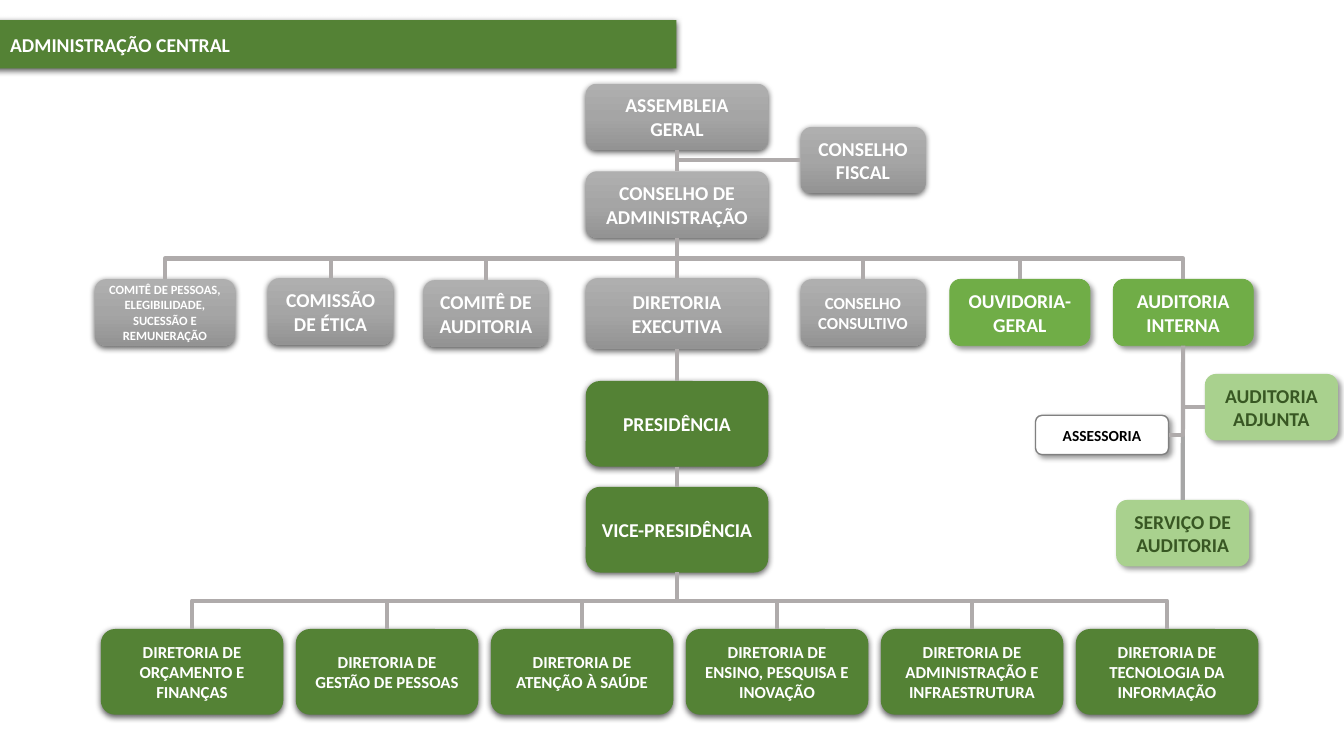
from dataclasses import dataclass
from copy import deepcopy

from lxml import etree
from pptx import Presentation
from pptx.dml.color import RGBColor
from pptx.enum.shapes import MSO_CONNECTOR, MSO_SHAPE
from pptx.enum.text import MSO_ANCHOR, MSO_AUTO_SIZE, PP_ALIGN
from pptx.oxml.ns import qn
from pptx.util import Inches, Pt

ROUNDED = MSO_SHAPE.ROUNDED_RECTANGLE
STRAIGHT, ELBOW = MSO_CONNECTOR.STRAIGHT, MSO_CONNECTOR.ELBOW
CENTER, LEFT_ALIGN = PP_ALIGN.CENTER, PP_ALIGN.LEFT
MIDDLE, NO_AUTOFIT = MSO_ANCHOR.MIDDLE, MSO_AUTO_SIZE.NONE
TOP, LEFT, BOTTOM, RIGHT = range(4)


@dataclass(frozen=True)
class Shadow:
    opacity: int
    blur: float
    distance: float
    angle: int


@dataclass(frozen=True)
class Style:
    fill: tuple[str, ...]
    text: str
    shadow: Shadow
    line: str = ""
    line_width: float = 0
    inset: float = 0


@dataclass(frozen=True)
class Theme:
    font: str = "Calibri"
    large: int = 14
    medium: int = 12
    small: int = 11
    tiny: int = 9
    connector: str = "AFABAB"
    audit_connector: str = "A6A6A6"
    connector_width: float = 3
    below: Shadow = Shadow(63, 4.5, 1.5, 90)
    diagonal: Shadow = Shadow(40, 4, 3, 45)
    council: Style = Style(("AFAFAF", "A5A5A5", "939393"), "FFFFFF", below)
    directorate: Style = Style(("548235",), "FFFFFF", below)
    control: Style = Style(("70AD47",), "FFFFFF", diagonal, "70AD47", 0.5)
    service: Style = Style(("A9D18E",), "385723", diagonal, inset=0.04)
    advisory: Style = Style(("FFFFFF",), "000000", diagonal, "808080", 1)


THEME = Theme()


@dataclass(frozen=True)
class Unit:
    text: str
    left: float
    top: float
    width: float
    height: float
    style: Style
    size: int = THEME.large


@dataclass(frozen=True)
class Link:
    parent: str
    child: str
    side: int = TOP
    color: str = THEME.connector


MAIN_LEFT, MAIN_WIDTH, LOW, HIGH = 5.81, 1.81, 0.66, 0.85
DIRECTORATE_PITCH = 9.67 / 5
UNITS = {
    "assembly": Unit("ASSEMBLEIA GERAL", MAIN_LEFT, 0.83, MAIN_WIDTH, LOW, THEME.council),
    "fiscal": Unit("CONSELHO\nFISCAL", 7.94, 1.26, 1.24, LOW, THEME.council),
    "board": Unit("CONSELHO DE ADMINISTRAÇÃO", MAIN_LEFT, 1.7, MAIN_WIDTH, LOW, THEME.council),
    "people": Unit("COMITÊ DE PESSOAS, ELEGIBILIDADE, SUCESSÃO E REMUNERAÇÃO",
                   0.94, 2.77, 1.39, LOW, THEME.council, THEME.tiny),
    "ethics": Unit("COMISSÃO DE ÉTICA", 2.66, 2.76, 1.24, LOW, THEME.council),
    "audit committee": Unit("COMITÊ DE AUDITORIA", 4.2, 2.78, 1.24, LOW, THEME.council),
    "executive": Unit("DIRETORIA EXECUTIVA", MAIN_LEFT, 2.76, MAIN_WIDTH, 0.7, THEME.council),
    "consultative": Unit("CONSELHO CONSULTIVO", 7.94, 2.77, 1.24, LOW, THEME.council, THEME.medium),
    "ombudsman": Unit("OUVIDORIA-GERAL", 9.42, 2.77, 1.39, LOW, THEME.control),
    "audit": Unit("AUDITORIA INTERNA", 11.04, 2.77, 1.39, LOW, THEME.control),
    "advisory": Unit("ASSESSORIA", 10.27, 4.12, 1.32, 0.39, THEME.advisory, THEME.small),
    "audit service": Unit("SERVIÇO DE AUDITORIA", 11.07, 4.96, 1.32, LOW, THEME.service),
    "deputy audit": Unit("AUDITORIA ADJUNTA", 11.95, 3.71, 1.32, LOW, THEME.service),
    "presidency": Unit("PRESIDÊNCIA", MAIN_LEFT, 3.78, MAIN_WIDTH, HIGH, THEME.directorate),
    "vice": Unit("VICE-PRESIDÊNCIA", MAIN_LEFT, 4.83, MAIN_WIDTH, HIGH, THEME.directorate),
}
DIRECTORATES = {
    name: Unit(name, 1 + index * DIRECTORATE_PITCH, 6.24, MAIN_WIDTH, HIGH,
               THEME.directorate, THEME.medium)
    for index, name in enumerate((
        "DIRETORIA DE ORÇAMENTO E FINANÇAS",
        "DIRETORIA DE GESTÃO DE PESSOAS",
        "DIRETORIA DE ATENÇÃO À SAÚDE",
        "DIRETORIA DE ENSINO, PESQUISA E INOVAÇÃO",
        "DIRETORIA DE ADMINISTRAÇÃO E INFRAESTRUTURA",
        "DIRETORIA DE TECNOLOGIA DA INFORMAÇÃO",
    ))
}
BOARD_BODIES = ("people", "ethics", "audit committee", "executive",
                "consultative", "ombudsman", "audit")
LINKS = [
    Link("assembly", "board"),
    Link("assembly", "fiscal", LEFT),
    *(Link("board", body) for body in BOARD_BODIES),
    Link("executive", "presidency"),
    Link("presidency", "vice"),
    *(Link("vice", name) for name in DIRECTORATES),
    Link("audit", "audit service", color=THEME.audit_connector),
    Link("audit", "deputy audit", LEFT),
    Link("audit", "advisory", RIGHT),
]


def paint(shape, style: Style) -> None:
    """Apply the fill, outline and shadow of a style."""
    properties = shape.element.spPr
    if len(style.fill) == 1:
        shape.fill.solid()
        shape.fill.fore_color.rgb = RGBColor.from_string(style.fill[0])
    else:
        shape.fill.gradient()
        shape.fill.gradient_angle = 270
        stop_list = properties.find(".//" + qn("a:gsLst"))
        stop_list.append(deepcopy(stop_list[0]))
        for index, (stop, color) in enumerate(zip(shape.fill.gradient_stops, style.fill)):
            stop.position = index / (len(style.fill) - 1)
            stop.color.rgb = RGBColor.from_string(color)
    if style.line:
        shape.line.color.rgb = RGBColor.from_string(style.line)
        shape.line.width = Pt(style.line_width)
    else:
        shape.line.fill.background()
    shape.shadow.inherit = False
    shadow = etree.SubElement(
        properties.find(qn("a:effectLst")), qn("a:outerShdw"),
        blurRad=str(Pt(style.shadow.blur)), dist=str(Pt(style.shadow.distance)),
        dir=str(style.shadow.angle * 60000), algn="ctr", rotWithShape="0")
    color = etree.SubElement(shadow, qn("a:srgbClr"), val="000000")
    etree.SubElement(color, qn("a:alpha"), val=str(style.shadow.opacity * 1000))


def write(shape, text: str, size: int, color: str, alignment: PP_ALIGN) -> None:
    frame = shape.text_frame
    frame.text = text
    frame.word_wrap = True
    frame.auto_size = NO_AUTOFIT
    frame.vertical_anchor = MIDDLE
    for paragraph in frame.paragraphs:
        paragraph.alignment = alignment
        font = paragraph.font
        font.name, font.size, font.bold = THEME.font, Pt(size), True
        font.color.rgb = RGBColor.from_string(color)


def draw_unit(slide, unit: Unit):
    shape = slide.shapes.add_shape(ROUNDED, Inches(unit.left), Inches(unit.top),
                                   Inches(unit.width), Inches(unit.height))
    paint(shape, unit.style)
    write(shape, unit.text, unit.size, unit.style.text, CENTER)
    if unit.style.inset:
        frame = shape.text_frame
        frame.margin_left = frame.margin_right = Inches(unit.style.inset)
        frame.margin_top = frame.margin_bottom = Inches(unit.style.inset)
    return shape


def turn_downwards(connector, side: int) -> None:
    """Make an elbow leave its parent downwards, with one bend when it ends at a side."""
    start_x, start_y = connector.begin_x, connector.begin_y
    end_x, end_y = connector.end_x, connector.end_y
    across, down = abs(end_x - start_x), end_y - start_y
    connector.left = (start_x + end_x - down) // 2
    connector.top = (start_y + end_y - across) // 2
    connector.width, connector.height = down, across
    properties = connector.element.spPr
    frame = properties.find(qn("a:xfrm"))
    for name in ("flipH", "flipV"):
        frame.attrib.pop(name, None)
    if end_x > start_x:
        frame.set("flipH", "1")
    frame.set("rot", str((270 if end_x > start_x else 90) * 60000))
    if side != TOP:
        properties.find(qn("a:prstGeom")).set("prst", "bentConnector2")


def draw_link(slide, link: Link, boxes: dict) -> None:
    parent, child = boxes[link.parent], boxes[link.child]
    offset = abs(parent.left + parent.width // 2 - child.left - child.width // 2)
    straight = link.side == TOP and offset < Inches(0.02)
    connector = slide.shapes.add_connector(STRAIGHT if straight else ELBOW, 0, 0, 0, 0)
    connector.begin_connect(parent, BOTTOM)
    connector.end_connect(child, link.side)
    if not straight:
        turn_downwards(connector, link.side)
    connector.line.color.rgb = RGBColor.from_string(link.color)
    connector.line.width = Pt(THEME.connector_width)
    etree.SubElement(connector.element.spPr, qn("a:effectLst"))


def draw_title(slide) -> None:
    title = slide.shapes.title
    title.left, title.top = Inches(-0.24), Inches(0.2)
    title.width, title.height = Inches(6.95), Inches(0.48)
    geometry = etree.SubElement(title.element.spPr, qn("a:prstGeom"), prst="roundRect")
    etree.SubElement(geometry, qn("a:avLst"))
    paint(title, THEME.directorate)
    write(title, "ADMINISTRAÇÃO CENTRAL", THEME.large, THEME.directorate.text, LEFT_ALIGN)
    title.text_frame.margin_left = Inches(0.34)


def main() -> None:
    presentation = Presentation()
    presentation.slide_width, presentation.slide_height = Inches(13.33), Inches(7.5)
    slide = presentation.slides.add_slide(presentation.slide_layouts[5])
    draw_title(slide)
    boxes = {name: draw_unit(slide, unit) for name, unit in (UNITS | DIRECTORATES).items()}
    for link in LINKS:
        draw_link(slide, link, boxes)
    presentation.save("out.pptx")


if __name__ == "__main__":
    main()
